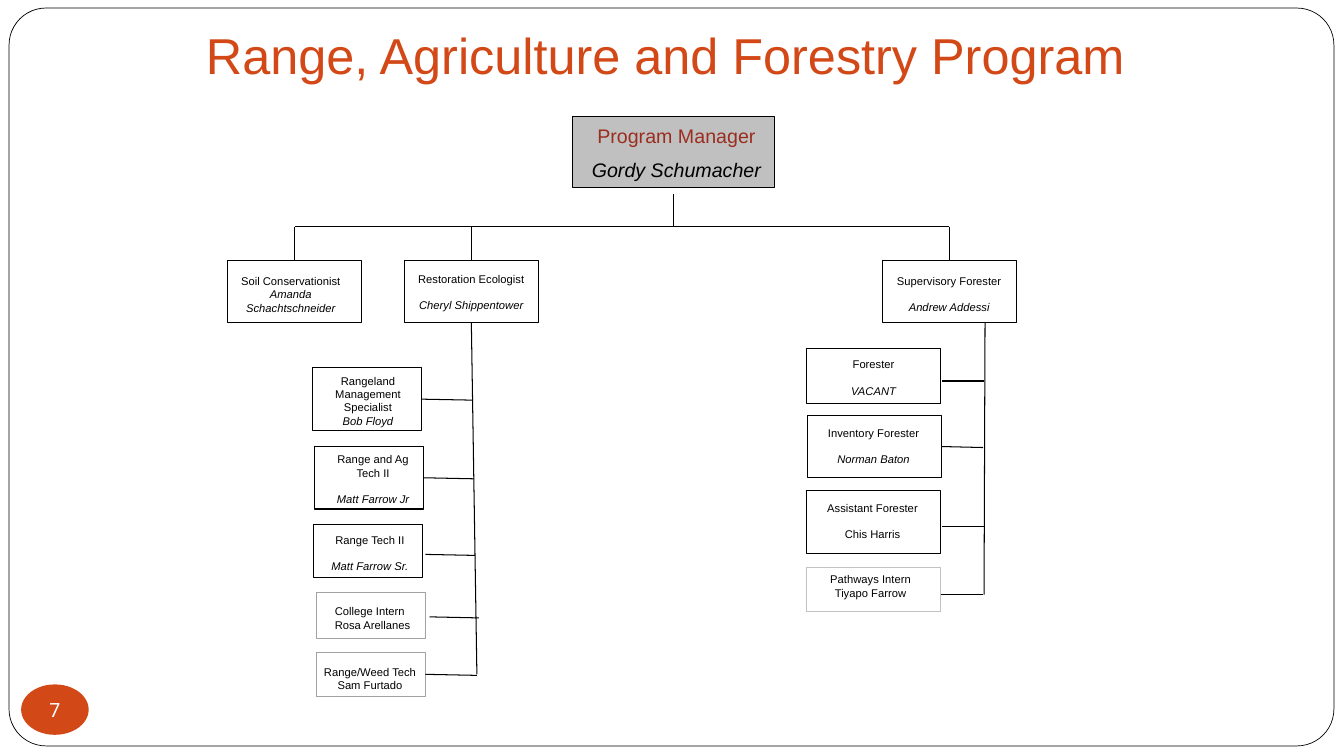
"""Build the organisation chart slide of a range, agriculture and forestry program."""
from dataclasses import dataclass

from lxml import etree
from pptx import Presentation
from pptx.dml.color import RGBColor
from pptx.enum import shapes, text
from pptx.oxml.ns import qn
from pptx.util import Inches, Pt


@dataclass(frozen=True)
class Theme:
    """Colours, fonts and type sizes of the slide."""
    accent: str = "D34817"
    role: str = "9B2D1F"
    ink: str = "000000"
    paper: str = "FFFFFF"
    panel: str = "C0C0C0"
    staff_edge: str = "A6A1A1"
    intern_edge: str = "C3C1C1"
    face: str = "Arial"
    badge_face: str = "Roboto"
    title: int = 36
    head: int = 14
    small: int = 8
    gap: float = 9.3
    head_gap: float = 7.5
    rule: float = 0.75


@dataclass(frozen=True)
class Card:
    """One post: its words, its place and the branch end beside it, in inches."""
    role: str
    name: str
    left: float
    top: float
    height: float
    inset: float
    shift: float = 0
    branch: tuple = ()
    italic: bool = True
    spaced: bool = True
    centred: bool = True
    edge: str = Theme.ink


THEME = Theme()
TITLE = "Range, Agriculture and Forestry Program"
PAGE_NUMBER = "7"
MANAGER = Card("Program Manager", "Gordy Schumacher", 5.68, 1.16, 0.7, 0.07, 0.03)
LEADS = [
    Card("Soil Conservationist", "Amanda Schachtschneider", 2.26, 2.58, 0.62, 0.14, -0.04,
         spaced=False),
    Card("Restoration Ecologist", "Cheryl Shippentower", 4.01, 2.58, 0.62, 0.12),
    Card("Supervisory Forester", "Andrew Addessi", 8.75, 2.58, 0.62, 0.14),
]
RANGE_TEAM = [
    Card("Rangeland Management Specialist", "Bob Floyd", 3.1, 3.65, 0.62, 0.06, 0.01,
         (4.2, 3.96), spaced=False),
    Card("Range and Ag Tech II", "Matt Farrow Jr", 3.12, 4.43, 0.62, 0.06, 0.04, (4.21, 4.74)),
    Card("Range Tech II", "Matt Farrow Sr.", 3.11, 5.2, 0.53, 0.09, 0.02, (4.22, 5.5)),
    Card("College Intern", "Rosa Arellanes", 3.14, 5.88, 0.45, 0.12, 0.06, (4.26, 6.12),
         italic=False, spaced=False, centred=False, edge=THEME.staff_edge),
    Card("Range/Weed Tech", "Sam Furtado", 3.14, 6.47, 0.44, 0.13, -0.01, (4.24, 6.69),
         italic=False, spaced=False, edge=THEME.staff_edge),
]
FORESTRY_TEAM = [
    Card("Forester", "VACANT", 8, 3.46, 0.54, 0.09, 0, (9.34, 3.78)),
    Card("Inventory Forester", "Norman Baton", 8.01, 4.12, 0.62, 0.11, -0.01, (9.33, 4.44)),
    Card("Assistant Forester", "Chis Harris", 8, 4.87, 0.62, 0.1, -0.01, (9.34, 5.22),
         italic=False),
    Card("Pathways Intern", "Tiyapo Farrow", 8, 5.63, 0.44, 0.05, -0.03, (9.33, 5.9),
         italic=False, spaced=False, edge=THEME.intern_edge),
]
MANAGER_WIDTH, LEAD_WIDTH, RANGE_WIDTH = 2, 1.33, 1.08
BUS_Y = 2.25
STEM_TOP = 1.92
MARGIN = 0.06
JOIN_LIMIT = 0.02


def write(para, words, *, size, color=THEME.ink, face=THEME.face, italic=False,
          align=text.PP_ALIGN.CENTER, before=0):
    """Put one formatted run of words into a paragraph."""
    para.alignment = align
    para.space_before = Pt(before)
    span = para.add_run()
    span.text = words
    span.font.name = face
    span.font.size = Pt(size)
    span.font.italic = italic
    span.font.color.rgb = RGBColor.from_string(color)


def set_insets(frame, left, top, right, bottom):
    """Set the four inner margins of a text frame, in inches."""
    frame.margin_left, frame.margin_top = Inches(left), Inches(top)
    frame.margin_right, frame.margin_bottom = Inches(right), Inches(bottom)


def add_box(page, kind, place, *, fill=None, edge=None, weight=THEME.rule):
    """Add a preset shape without shadow."""
    box = page.shapes.add_shape(kind, *map(Inches, place))
    box.shadow.inherit = False
    if fill:
        box.fill.solid()
        box.fill.fore_color.rgb = RGBColor.from_string(fill)
    else:
        box.fill.background()
    if edge:
        box.line.color.rgb = RGBColor.from_string(edge)
        box.line.width = Pt(weight)
    else:
        box.line.fill.background()
    return box


def add_line(page, start, end):
    """Draw a thin straight connector between two points."""
    line = page.shapes.add_connector(shapes.MSO_CONNECTOR.STRAIGHT, *map(Inches, start + end))
    line.line.color.rgb = RGBColor.from_string(THEME.ink)
    line.line.width = Pt(THEME.rule)
    etree.SubElement(line._element.spPr, qn("a:effectLst"))
    return line


def add_card(page, card, width, *, size=THEME.small, role_color=THEME.ink, fill=None,
             gap=THEME.gap):
    """Add a post's rectangle with its role and holder."""
    box = add_box(page, shapes.MSO_SHAPE.RECTANGLE, (card.left, card.top, width, card.height),
                  fill=fill, edge=card.edge)
    frame = box.text_frame
    frame.word_wrap = True
    frame.vertical_anchor = text.MSO_ANCHOR.TOP
    set_insets(frame, MARGIN + max(2 * card.shift, 0), card.inset,
               MARGIN + max(-2 * card.shift, 0), 0)
    align = text.PP_ALIGN.CENTER if card.centred else text.PP_ALIGN.LEFT
    write(frame.paragraphs[0], card.role, size=size, color=role_color, align=align)
    write(frame.add_paragraph(), card.name, size=size, italic=card.italic, align=align,
          before=gap if card.spaced else 0)
    return box


def add_team(page, team, width, *, reach, drop):
    """Add the posts of a team, each with a branch to its trunk."""
    for card in team:
        box = add_card(page, card, width)
        x, y = card.branch
        line = add_line(page, (x + reach, y + drop), (x, y))
        off_side = abs(x - card.left - width)
        off_middle = abs(y - card.top - card.height / 2)
        if max(off_side, off_middle) <= JOIN_LIMIT + 0.001:
            line.end_connect(box, 3)


def main():
    """Assemble and save the slide."""
    deck = Presentation()
    deck.slide_width, deck.slide_height = Inches(13.33), Inches(7.5)
    page = deck.slides.add_slide(deck.slide_layouts[5])

    title = page.shapes.title
    title.left, title.top, title.width, title.height = map(Inches, (1.58, 0.11, 10.04, 0.83))
    title.text_frame.vertical_anchor = text.MSO_ANCHOR.BOTTOM
    set_insets(title.text_frame, 0.1, 0.05, 0.1, 0.1)
    write(title.text_frame.paragraphs[0], TITLE, size=THEME.title, color=THEME.accent)

    border = add_box(page, shapes.MSO_SHAPE.ROUNDED_RECTANGLE, (0.09, 0.08, 13.14, 7.32),
                     edge=THEME.ink, weight=0.5)
    border.adjustments[0] = 0.05
    badge = add_box(page, shapes.MSO_SHAPE.OVAL, (0.21, 6.79, 0.67, 0.5), fill=THEME.accent)
    set_insets(badge.text_frame, 0, 0, 0, 0)
    badge.text_frame.vertical_anchor = text.MSO_ANCHOR.MIDDLE
    write(badge.text_frame.paragraphs[0], PAGE_NUMBER, size=THEME.head, color=THEME.paper,
          face=THEME.badge_face)

    add_card(page, MANAGER, MANAGER_WIDTH, size=THEME.head, role_color=THEME.role,
             fill=THEME.panel, gap=THEME.head_gap)
    stem_x = MANAGER.left + MANAGER_WIDTH / 2
    add_line(page, (stem_x, STEM_TOP), (stem_x, BUS_Y))
    centres = [lead.left + LEAD_WIDTH / 2 for lead in LEADS]
    add_line(page, (centres[0], BUS_Y), (centres[-1], BUS_Y))
    lead_boxes = []
    for lead, centre in zip(LEADS, centres):
        box = add_card(page, lead, LEAD_WIDTH)
        add_line(page, (centre, BUS_Y), (centre, lead.top)).end_connect(box, 0)
        lead_boxes.append(box)

    add_line(page, (4.68, 3.2), (4.73, 6.69)).begin_connect(lead_boxes[1], 2)
    add_line(page, (9.77, 3.2), (9.76, 5.9))
    add_team(page, RANGE_TEAM, RANGE_WIDTH, reach=0.49, drop=0.01)
    add_team(page, FORESTRY_TEAM, LEAD_WIDTH, reach=0.42, drop=0)
    deck.save("out.pptx")


if __name__ == "__main__":
    main()
